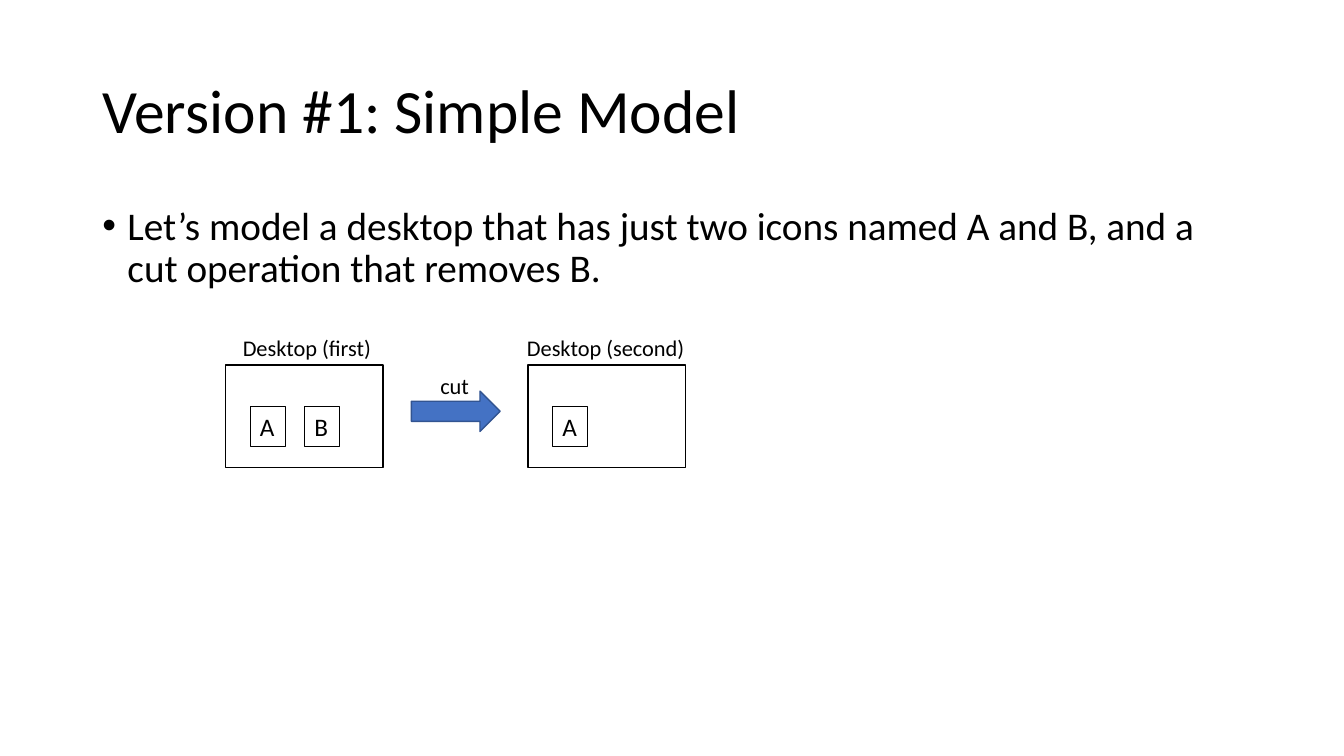
from lxml import etree
from pptx import Presentation
from pptx.dml.color import RGBColor
from pptx.enum.shapes import MSO_SHAPE
from pptx.enum.text import MSO_ANCHOR, PP_ALIGN
from pptx.oxml.ns import qn
from pptx.util import Pt

# Content
TITLE = "Version #1: Simple Model"
BULLET = ("Let’s model a desktop that has just two icons named A and B, "
          "and a cut operation that removes B.")
# caption, caption offset from the desktop, caption width, icons
DESKTOPS = [
    ("Desktop (first)", 5, 107.3, ["A", "B"]),
    ("Desktop (second)", -8, 128.9, ["A"]),
]
OPERATION = "cut"

# Format
FONT = "Calibri"
BLACK = RGBColor(0x00, 0x00, 0x00)
BLUE = RGBColor(0x44, 0x72, 0xC4)
DARK_BLUE = RGBColor(0x32, 0x54, 0x91)
LEFT, TOP, MIDDLE = PP_ALIGN.LEFT, MSO_ANCHOR.TOP, MSO_ANCHOR.MIDDLE
RECTANGLE, RIGHT_ARROW = MSO_SHAPE.RECTANGLE, MSO_SHAPE.RIGHT_ARROW
BODY_SPACING = {"line_spacing": 0.9, "space_before": Pt(10)}

# Layout, in points
MARGIN, TEXT_WIDTH = 66, 828
DESKTOP_LEFT, DESKTOP_TOP, DESKTOP_STEP = 161.3, 260.6, 216
DESKTOP_WIDTH, DESKTOP_HEIGHT = 112.3, 73.4
ICON_LEFT, ICON_TOP, ICON_STEP = 17.3, 29.5, 38.9
ICON_WIDTH, ICON_HEIGHT = 25.2, 28.8
CAPTION_TOP, CAPTION_HEIGHT = 235.4, 26.6

presentation = Presentation()
presentation.slide_width, presentation.slide_height = Pt(960), Pt(540)
slide = presentation.slides.add_slide(presentation.slide_layouts[5])


def set_all(target, values):
    for name, value in values.items():
        setattr(target, name, value)


def write(holder, text, size, wrap=False, anchor=TOP, **spacing):
    frame = holder.text_frame
    frame.text = text
    set_all(frame, {"word_wrap": wrap, "vertical_anchor": anchor})
    paragraph = frame.paragraphs[0]
    set_all(paragraph, {"alignment": LEFT, **spacing})
    set_all(paragraph.runs[0].font, {"size": Pt(size), "name": FONT})
    paragraph.runs[0].font.color.rgb = BLACK
    return paragraph


def add_text(text, left, top, width, height, size, **options):
    box = slide.shapes.add_textbox(Pt(left), Pt(top), Pt(width), Pt(height))
    return write(box, text, size, **options)


def add_outline(kind, left, top, width, height, line_width,
                line=BLACK, fill=None):
    outline = slide.shapes.add_shape(kind, Pt(left), Pt(top), Pt(width), Pt(height))
    outline.shadow.inherit = False
    outline.line.color.rgb = line
    outline.line.width = Pt(line_width)
    if fill is None:
        outline.fill.background()
    else:
        outline.fill.solid()
        outline.fill.fore_color.rgb = fill
    return outline


# Title
title = slide.shapes.title
set_all(title, {"left": Pt(MARGIN), "top": Pt(28.8),
                "width": Pt(TEXT_WIDTH), "height": Pt(104.4)})
write(title, TITLE, 44, wrap=True, anchor=MIDDLE, line_spacing=0.9)

# Bulleted statement
statement = add_text(BULLET, MARGIN, 144, TEXT_WIDTH, 84.2, 28,
                     wrap=True, **BODY_SPACING)
properties = statement._p.get_or_add_pPr()
properties.set("marL", str(Pt(18)))
properties.set("indent", str(-Pt(18)))
etree.SubElement(properties, qn("a:buFont")).set("typeface", "Arial")
etree.SubElement(properties, qn("a:buChar")).set("char", "•")

# Desktops with their icons and captions
for column, (caption, offset, caption_width, icons) in enumerate(DESKTOPS):
    left = DESKTOP_LEFT + column * DESKTOP_STEP
    add_outline(RECTANGLE, left, DESKTOP_TOP, DESKTOP_WIDTH, DESKTOP_HEIGHT, 1)
    for position, letter in enumerate(icons):
        icon = add_outline(RECTANGLE, left + ICON_LEFT + position * ICON_STEP,
                           DESKTOP_TOP + ICON_TOP, ICON_WIDTH, ICON_HEIGHT, 0.75)
        write(icon, letter, 18)
    add_text(caption, left + offset, CAPTION_TOP, caption_width, CAPTION_HEIGHT, 16)

# Cut operation
add_outline(RIGHT_ARROW, 293.8, 279.4, 63.4, 28.8, 1, line=DARK_BLUE, fill=BLUE)
add_text(OPERATION, 307.4, 262.1, 35.3, CAPTION_HEIGHT, 16)

presentation.save("out.pptx")
